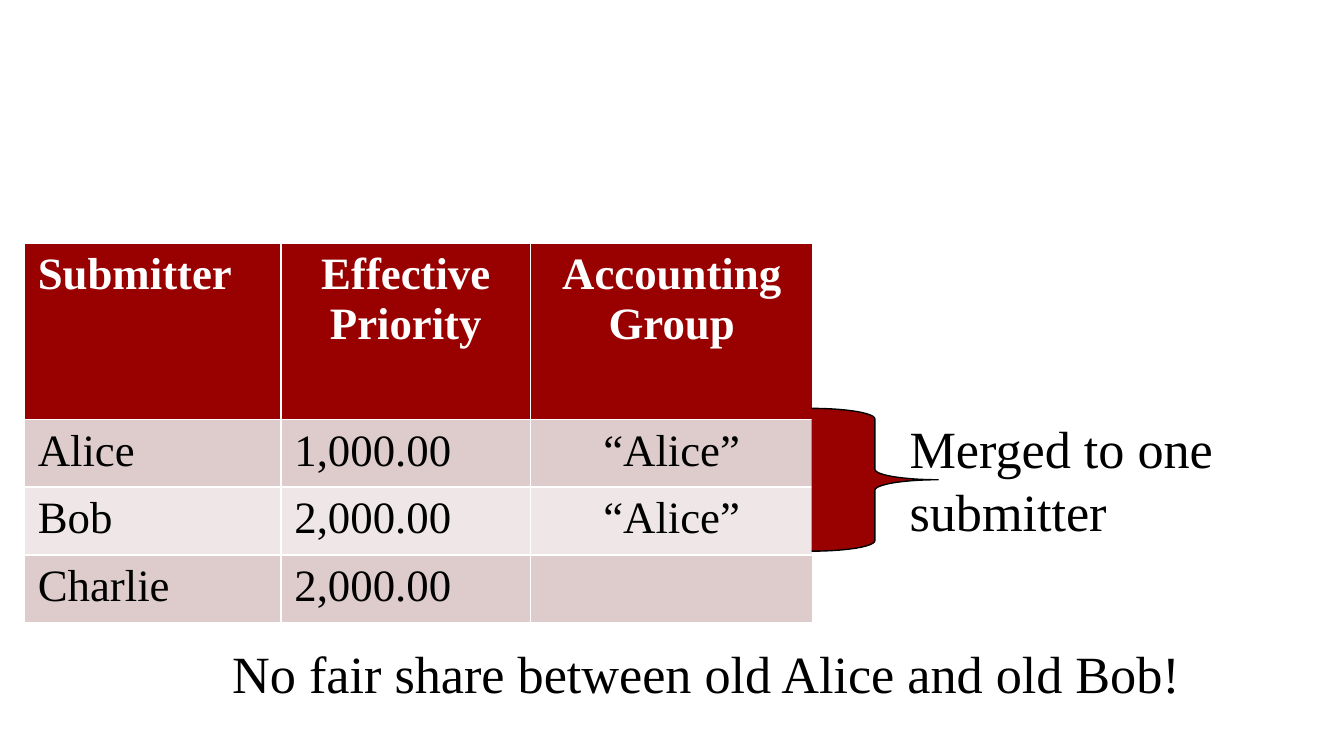
"""Build the slide showing two submitters merged by one accounting group."""
from dataclasses import dataclass

from pptx import Presentation
from pptx import util as u
from pptx.dml.color import RGBColor
from pptx.enum import shapes, text


@dataclass(frozen=True)
class Theme:
    font: str = "Times New Roman"
    table_size: int = 24
    note_size: int = 28
    accent: str = "990000"
    light: str = "FFFFFF"
    dark: str = "000000"
    bands: tuple = ("DECCCC", "EFE7E7")


theme = Theme()


def style(paragraph, size, color, bold=False):
    paragraph.font.name = theme.font
    paragraph.font.size = u.Pt(size)
    paragraph.font.bold = bold
    paragraph.font.color.rgb = RGBColor.from_string(color)


def paint(fill, color):
    fill.solid()
    fill.fore_color.rgb = RGBColor.from_string(color)


deck = Presentation()
deck.slide_width, deck.slide_height = u.Cm(25.4), u.Cm(14.29)
slide = deck.slides.add_slide(deck.slide_layouts[6])

submitters = [
    ("Submitter", "Effective\nPriority", "Accounting\nGroup"),
    ("Alice", "1,000.00", "“Alice”"),
    ("Bob", "2,000.00", "“Alice”"),
    ("Charlie", "2,000.00", ""),
]
widths = (4.85, 4.72, 5.33)
heights = (3.33, 1.28, 1.28, 1.28)
priorities = slide.shapes.add_table(
    len(heights), len(widths), u.Cm(0.46), u.Cm(4.6), u.Cm(sum(widths)), u.Cm(sum(heights))
).table
for column, width in zip(priorities.columns, widths):
    column.width = u.Cm(width)
for row, height in zip(priorities.rows, heights):
    row.height = u.Cm(height)

for r, entries in enumerate(submitters):
    header = r == 0
    for c, entry in enumerate(entries):
        cell = priorities.cell(r, c)
        cell.text = entry
        paint(cell.fill, theme.accent if header else theme.bands[(r - 1) % 2])
        centred = c == 2 or (header and c == 1)
        for paragraph in cell.text_frame.paragraphs:
            style(paragraph, theme.table_size, theme.light if header else theme.dark, header)
            paragraph.alignment = text.PP_ALIGN.CENTER if centred else text.PP_ALIGN.LEFT

brace = slide.shapes.add_shape(
    shapes.MSO_SHAPE.RIGHT_BRACE, u.Cm(15.34), u.Cm(7.72), u.Cm(2.39), u.Cm(2.7)
)
brace.shadow.inherit = False
paint(brace.fill, theme.accent)
paint(brace.line.fill, theme.dark)
brace.line.width = u.Pt(0.75)

notes = [
    ("Merged to one\nsubmitter", 16.94, 7.75, 8.74, 2.64),
    ("No fair share between old Alice and old Bob!", 4.14, 11.99, 18.85, 1.45),
]
for wording, *bounds in notes:
    note = slide.shapes.add_textbox(*map(u.Cm, bounds)).text_frame
    note.word_wrap = True
    note.auto_size = text.MSO_AUTO_SIZE.SHAPE_TO_FIT_TEXT
    note.text = wording
    for paragraph in note.paragraphs:
        style(paragraph, theme.note_size, theme.dark)

deck.save("out.pptx")
